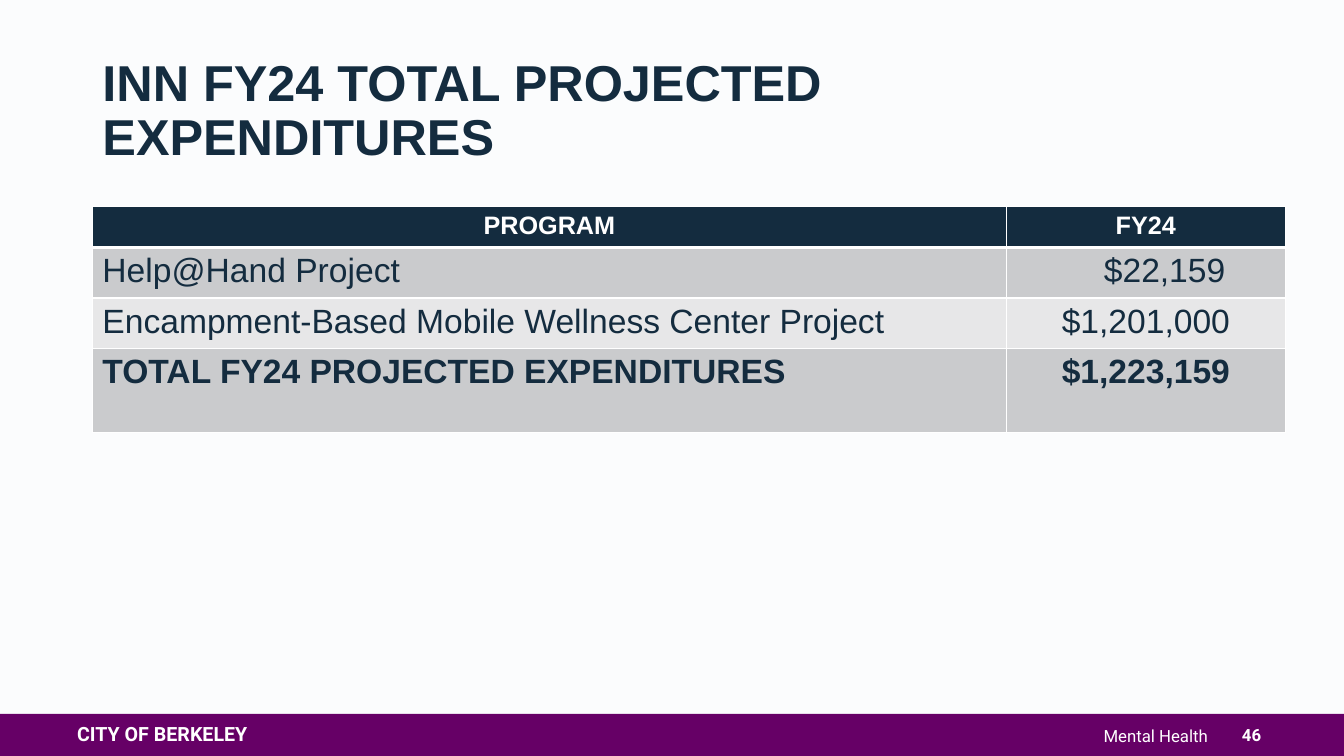
import pptx
import pptx.dml.color
import pptx.enum.shapes
import pptx.enum.text
import pptx.oxml
import pptx.oxml.ns
import pptx.util

Pt = pptx.util.Pt
ALIGN = pptx.enum.text.PP_ALIGN
MIDDLE = pptx.enum.text.MSO_ANCHOR.MIDDLE
NAVY, WHITE, PURPLE = "142C3F", "FFFFFF", "660066"
GREY, LIGHT_GREY = "CACBCD", "E7E7E8"


def rgb(value):
    return pptx.dml.color.RGBColor.from_string(value)


def style(p, size, color, bold, align, font="Arial"):
    p.alignment = align
    for r in p.runs:
        r.font.name = font
        r.font.size = Pt(size)
        r.font.bold = bold
        r.font.color.rgb = rgb(color)


prs = pptx.Presentation()
prs.slide_width, prs.slide_height = Pt(960), Pt(540)
s = prs.slides.add_slide(prs.slide_layouts[5])
s.background.fill.solid()
s.background.fill.fore_color.rgb = rgb("FBFCFD")

# Footer
bar = s.shapes.add_shape(pptx.enum.shapes.MSO_SHAPE.RECTANGLE, 0, Pt(510), Pt(960), Pt(30))
bar.shadow.inherit = False
bar.fill.solid()
bar.fill.fore_color.rgb = rgb(PURPLE)
bar.line.fill.background()

footer = [
    ("CITY OF BERKELEY", (48, 500.4, 180, 49), 14, True, ALIGN.LEFT, 0.9),
    ("Mental Health", (420, 501.8, 450, 49), 12, False, ALIGN.RIGHT, 0.9),
    ("46", (870, 510, 48, 30), 12, True, ALIGN.CENTER, 1.0),
]
for text, box, size, bold, align, spacing in footer:
    tf = s.shapes.add_textbox(*map(Pt, box)).text_frame
    tf.word_wrap = True
    tf.vertical_anchor = MIDDLE
    tf.text = text
    p = tf.paragraphs[0]
    p.line_spacing = spacing
    style(p, size, WHITE, bold, align, "Roboto")

# Title
title = s.shapes.title
title.left, title.top, title.width, title.height = map(Pt, (66, 37.5, 828, 88.5))
tf = title.text_frame
tf.text = "INN FY24 TOTAL PROJECTED\vEXPENDITURES"
tf.auto_size = pptx.enum.text.MSO_AUTO_SIZE.NONE
tf.vertical_anchor = pptx.enum.text.MSO_ANCHOR.TOP
tf.paragraphs[0].line_spacing = 0.9
style(tf.paragraphs[0], 36, NAVY, True, ALIGN.LEFT)

# Expenditure table
rows = [
    ("PROGRAM", "FY24"),
    ("Help@Hand Project", "$22,159"),
    ("Encampment-Based Mobile Wellness Center Project", "$1,201,000"),
    ("TOTAL FY24 PROJECTED EXPENDITURES", "$1,223,159"),
]
heights = [29.2, 34.4, 34.4, 60]
table = s.shapes.add_table(4, 2, Pt(66), Pt(147.6), Pt(852), Pt(sum(heights))).table
for column, width in zip(table.columns, (653, 199)):
    column.width = Pt(width)

for i, (row, height) in enumerate(zip(rows, heights)):
    table.rows[i].height = Pt(height)
    header, total = i == 0, i == len(rows) - 1
    for j, text in enumerate(row):
        cell = table.cell(i, j)
        tcPr = cell._tc.get_or_add_tcPr()
        for side in "LRTB":
            heavy = (i, side) in ((0, "B"), (1, "T"))
            tcPr.append(pptx.oxml.parse_xml(
                f'<a:ln{side} {pptx.oxml.ns.nsdecls("a")} w="{Pt(3 if heavy else 1)}">'
                f'<a:solidFill><a:srgbClr val="{WHITE}"/></a:solidFill></a:ln{side}>'))
        cell.fill.solid()
        cell.fill.fore_color.rgb = rgb(NAVY if header else GREY if i % 2 else LIGHT_GREY)
        cell.text = text
        align = ALIGN.CENTER if header or j == 1 else ALIGN.LEFT
        style(cell.text_frame.paragraphs[0], 18 if header else 24,
              WHITE if header else NAVY, header or total, align)
# Shift the shorter amount towards the right edge of the amounts below it
table.cell(1, 1).margin_left = Pt(34)

prs.save("out.pptx")
